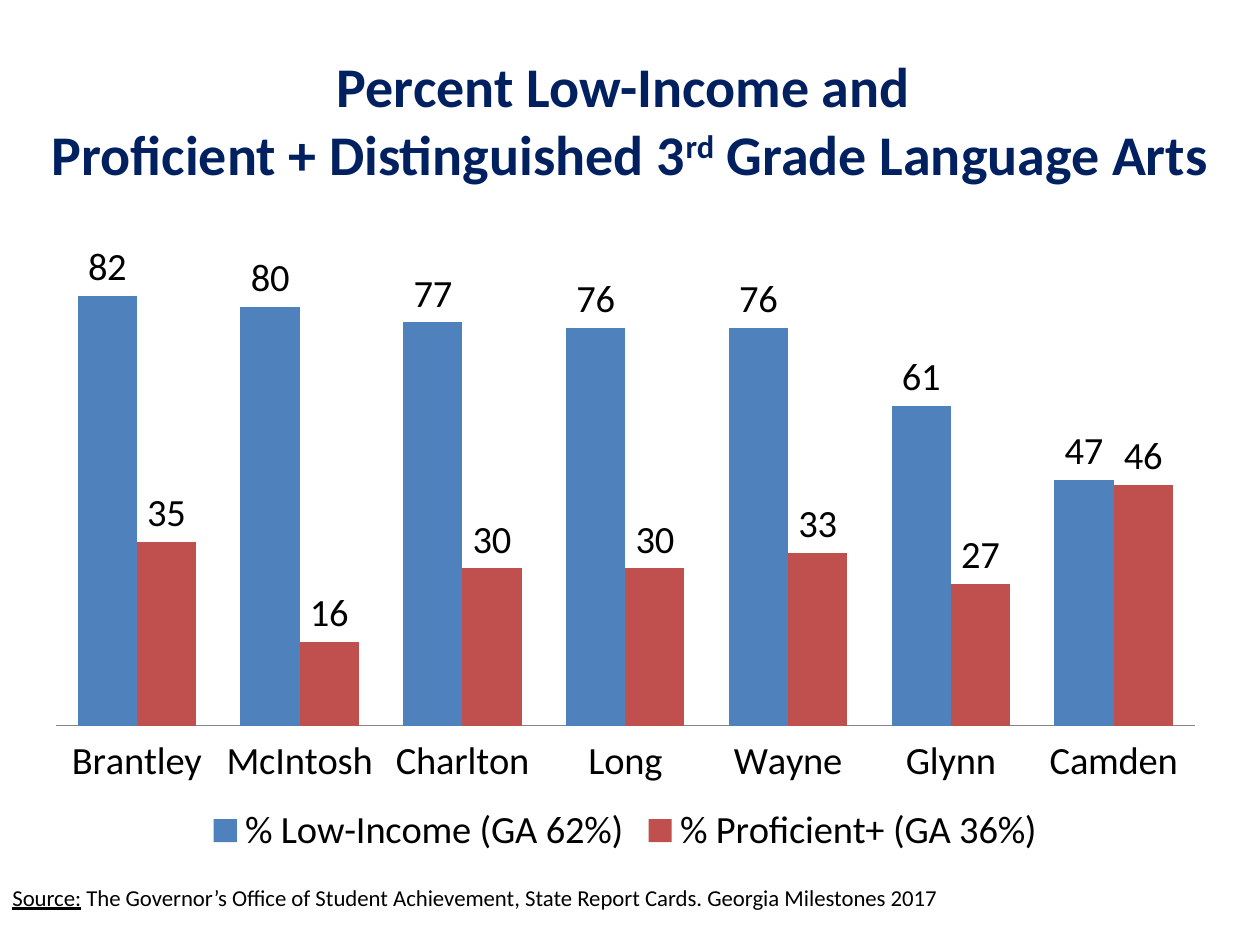
from dataclasses import dataclass

from lxml.etree import SubElement
from pptx import Presentation
from pptx.chart.data import CategoryChartData
from pptx.dml.color import RGBColor
from pptx.enum.chart import XL_CHART_TYPE as ChartType
from pptx.enum.chart import XL_LABEL_POSITION as LabelPosition
from pptx.enum.chart import XL_LEGEND_POSITION as LegendPosition
from pptx.enum.chart import XL_TICK_LABEL_POSITION as TickLabels
from pptx.enum.chart import XL_TICK_MARK as TickMark
from pptx.enum.text import MSO_ANCHOR as Anchor
from pptx.enum.text import PP_ALIGN as Align
from pptx.oxml.ns import qn
from pptx.util import Cm, Pt


@dataclass(frozen=True)
class Theme:
    font: str = "Calibri"
    navy: RGBColor = RGBColor(0x00, 0x20, 0x60)
    black: RGBColor = RGBColor(0, 0, 0)
    axis: RGBColor = RGBColor(0x86, 0x86, 0x86)
    title_size: Pt = Pt(32)
    chart_size: Pt = Pt(22)
    source_size: Pt = Pt(13)


@dataclass(frozen=True)
class Box:
    left: float
    top: float
    width: float
    height: float

    def lengths(self) -> list[Cm]:
        return [Cm(v) for v in (self.left, self.top, self.width, self.height)]


@dataclass(frozen=True)
class Phrase:
    text: str
    underline: bool = False
    superscript: bool = False


@dataclass(frozen=True)
class Measure:
    name: str
    values: tuple[int, ...]
    color: RGBColor


THEME = Theme()
TITLE = (
    Phrase("Percent Low-Income and \vProficient + Distinguished 3"),
    Phrase("rd", superscript=True),
    Phrase(" Grade Language Arts"),
)
SOURCE = (
    Phrase("Source:", underline=True),
    Phrase(" The Governor’s Office of Student Achievement, State Report Cards. "
           "Georgia Milestones 2017"),
)
COUNTIES = ("Brantley", "McIntosh", "Charlton", "Long", "Wayne", "Glynn", "Camden")
MEASURES = (
    Measure("% Low-Income (GA 62%)", (82, 80, 77, 76, 76, 61, 47),
            RGBColor(0x4F, 0x81, 0xBD)),
    Measure("% Proficient+ (GA 36%)", (35, 16, 30, 30, 33, 27, 46),
            RGBColor(0xC0, 0x50, 0x4D)),
)
PLOT_AREA = {"x": 0.02, "y": 0.02, "w": 0.96, "h": 0.76}


def apply(target, formats: dict) -> None:
    for attribute, value in formats.items():
        setattr(target, attribute, value)


def add_text(slide, box: Box, phrases: tuple[Phrase, ...], frame_format: dict,
             paragraph_format: dict, font_format: dict, color: RGBColor) -> None:
    frame = slide.shapes.add_textbox(*box.lengths()).text_frame
    apply(frame, {"word_wrap": True, **frame_format})
    paragraph = frame.paragraphs[0]
    apply(paragraph, paragraph_format)
    for index, phrase in enumerate(phrases):
        lines = phrase.text.split("\v")
        for number, line in enumerate(lines):
            if number:
                paragraph.add_line_break()
            run = paragraph.add_run()
            run.text = line
            apply(run.font, {"name": THEME.font, "underline": phrase.underline,
                             **font_format})
            run.font.color.rgb = color
            if phrase.superscript:
                run.font._element.set("baseline", "30000")


def place_plot(chart) -> None:
    plot_area = chart._chartSpace.chart.plotArea
    for old in plot_area.findall(qn("c:layout")):
        plot_area.remove(old)
    layout = SubElement(plot_area, qn("c:layout"))
    plot_area.insert(0, layout)
    manual = SubElement(layout, qn("c:manualLayout"))
    settings = {"layoutTarget": "inner", "xMode": "edge", "yMode": "edge", **PLOT_AREA}
    for tag, value in settings.items():
        SubElement(manual, qn(f"c:{tag}")).set("val", str(value))


def add_county_chart(slide, box: Box, measures: tuple[Measure, ...]) -> None:
    data = CategoryChartData(number_format="0")
    data.categories = COUNTIES
    for measure in measures:
        data.add_series(measure.name, measure.values)
    chart = slide.shapes.add_chart(ChartType.COLUMN_CLUSTERED, *box.lengths(), data).chart
    apply(chart, {"has_title": False, "has_legend": True})
    apply(chart.font, {"name": THEME.font, "size": THEME.chart_size})
    chart.font.color.rgb = THEME.black
    apply(chart.legend, {"position": LegendPosition.BOTTOM, "include_in_layout": False})

    # Axes
    apply(chart.value_axis, {"visible": False, "has_major_gridlines": False,
                             "minimum_scale": 0, "maximum_scale": 90})
    apply(chart.category_axis, {"major_tick_mark": TickMark.NONE,
                                "tick_label_position": TickLabels.LOW})
    axis_line = chart.category_axis.format.line
    axis_line.width = Pt(0.75)
    axis_line.color.rgb = THEME.axis

    # Columns and their labels
    plot = chart.plots[0]
    apply(plot, {"gap_width": 75, "overlap": 0, "vary_by_categories": False,
                 "has_data_labels": True})
    apply(plot.data_labels, {"show_value": True, "number_format": "0",
                             "number_format_is_linked": False,
                             "position": LabelPosition.OUTSIDE_END})
    for series, measure in zip(plot.series, measures):
        series.format.fill.solid()
        series.format.fill.fore_color.rgb = measure.color
    place_plot(chart)


def main() -> None:
    deck = Presentation()
    apply(deck, {"slide_width": Cm(25.4), "slide_height": Cm(19.05)})
    slide = deck.slides.add_slide(deck.slide_layouts[6])

    # Title
    add_text(slide, Box(0, 0.56, 25.4, 3.68), TITLE,
             {"vertical_anchor": Anchor.MIDDLE}, {"alignment": Align.CENTER},
             {"size": THEME.title_size, "bold": True}, THEME.navy)

    # Source line
    add_text(slide, Box(0, 17.88, 22.23, 0.64), SOURCE, {},
             {"line_spacing": 0.6, "space_before": Pt(6.5)},
             {"size": THEME.source_size}, THEME.black)

    # Chart of counties
    add_county_chart(slide, Box(0.64, 4.88, 23.93, 12.5), MEASURES)

    deck.save("out.pptx")


if __name__ == "__main__":
    main()
